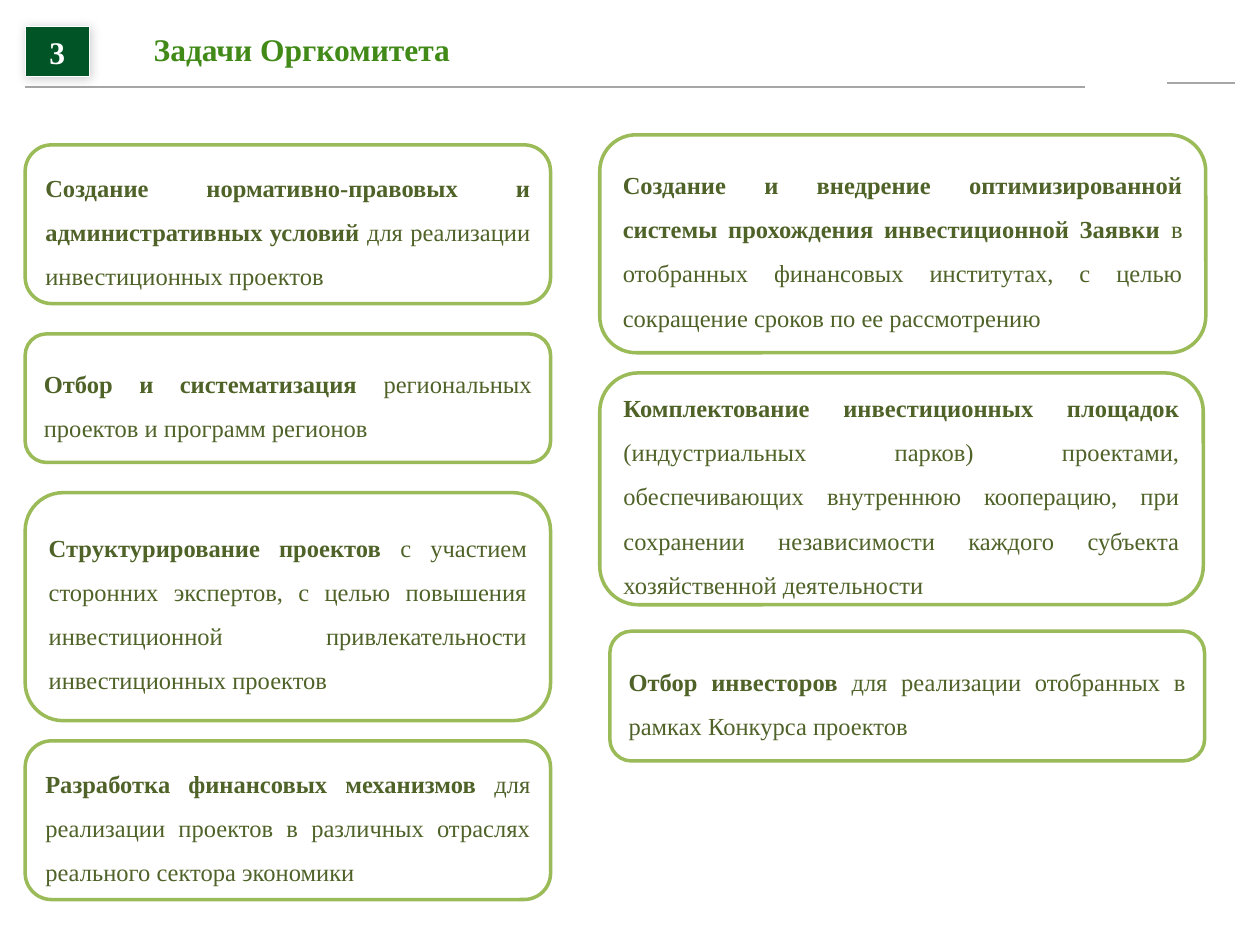
from lxml import etree
from pptx import Presentation
from pptx.dml.color import RGBColor
from pptx.enum.shapes import MSO_CONNECTOR, MSO_SHAPE
from pptx.enum.text import MSO_ANCHOR, PP_ALIGN
from pptx.oxml import parse_xml
from pptx.oxml.ns import nsdecls, qn
from pptx.util import Inches, Pt

RECT, ROUND = MSO_SHAPE.RECTANGLE, MSO_SHAPE.ROUNDED_RECTANGLE
STRAIGHT = MSO_CONNECTOR.STRAIGHT
MIDDLE = MSO_ANCHOR.MIDDLE
LEFT, CENTER, JUSTIFY = PP_ALIGN.LEFT, PP_ALIGN.CENTER, PP_ALIGN.JUSTIFY

WHITE = RGBColor(0xFF, 0xFF, 0xFF)
GRAY = RGBColor(0xA6, 0xA6, 0xA6)
GREEN = RGBColor(0x41, 0x8A, 0x18)
DARK = RGBColor(0x00, 0x54, 0x26)
LIME = RGBColor(0x9B, 0xBB, 0x59)
OLIVE = RGBColor(0x4F, 0x62, 0x28)

SHADOW = (
    f'<a:effectLst {nsdecls("a")}>'
    '<a:outerShdw blurRad="76200" dist="12700" dir="2700000">'
    '<a:srgbClr val="000000"><a:alpha val="20000"/></a:srgbClr>'
    '</a:outerShdw></a:effectLst>'
)

# left, top, width, height, bold lead, plain rest
TASKS = [
    (0.2, 1.15, 4.17, 1.26,
     "Создание нормативно-правовых и административных условий ",
     "для реализации инвестиционных проектов"),
    (0.2, 2.65, 4.17, 1.02, "Отбор и систематизация ",
     "региональных проектов и программ регионов"),
    (0.2, 3.91, 4.17, 1.81, "Структурирование проектов ",
     "с участием сторонних экспертов, с целью повышения "
     "инвестиционной привлекательности инвестиционных проектов"),
    (0.2, 5.88, 4.17, 1.26, "Разработка финансовых механизмов ",
     "для реализации проектов в различных отраслях "
     "реального сектора экономики"),
    (4.76, 1.07, 4.81, 1.73,
     "Создание и внедрение оптимизированной системы прохождения "
     "инвестиционной Заявки ",
     "в отобранных финансовых институтах, с целью сокращение сроков "
     "по ее рассмотрению"),
    (4.76, 2.96, 4.79, 1.84, "Комплектование инвестиционных площадок ",
     "(индустриальных парков) проектами, обеспечивающих внутреннюю "
     "кооперацию, при сохранении независимости каждого субъекта "
     "хозяйственной деятельности"),
    (4.84, 5.01, 4.72, 1.03, "Отбор инвесторов ",
     "для реализации отобранных в рамках Конкурса проектов"),
]


class Board:
    """Holds the text style and the current slide."""

    face = "Times New Roman"
    head = 18
    body = 14

    def __init__(self, slide):
        self.slide = slide

    def style(self, run, size, color, bold=True):
        font = run.font
        font.name, font.size, font.bold = self.face, Pt(size), bold
        font.color.rgb = color

    def title(self, text, *box):
        shape = self.slide.shapes.title
        shape.left, shape.top, shape.width, shape.height = map(Inches, box)
        frame = shape.text_frame
        frame.text = text
        frame.vertical_anchor = MIDDLE
        frame.margin_left = frame.margin_right = 0
        frame.margin_top = frame.margin_bottom = 0
        para = frame.paragraphs[0]
        para.alignment = LEFT
        self.style(para.runs[0], self.head, GREEN)

    def rule(self, left, right, top):
        line = self.slide.shapes.add_connector(
            STRAIGHT, Inches(left), Inches(top), Inches(right), Inches(top))
        line.line.color.rgb = GRAY
        line.line.width = Pt(1)
        etree.SubElement(line._element.spPr, qn("a:effectLst"))

    def shape(self, kind, box, fill, edge, width):
        shape = self.slide.shapes.add_shape(kind, *map(Inches, box))
        shape.fill.solid()
        shape.fill.fore_color.rgb = fill
        shape.line.color.rgb = edge
        shape.line.width = Pt(width)
        shape.text_frame.word_wrap = True
        shape.text_frame.vertical_anchor = MIDDLE
        return shape

    def task(self, *box, lead, rest):
        shape = self.shape(ROUND, box, WHITE, LIME, 2)
        shape.shadow.inherit = False
        para = shape.text_frame.paragraphs[0]
        para.alignment = JUSTIFY
        para.line_spacing = 1.5
        for text, bold in ((lead, True), (rest, False)):
            run = para.add_run()
            run.text = text
            self.style(run, self.body, OLIVE, bold)

    def badge(self, text, *box):
        shape = self.shape(RECT, box, DARK, WHITE, 0.75)
        shape._element.spPr.append(parse_xml(SHADOW))
        shape.text_frame.text = text
        para = shape.text_frame.paragraphs[0]
        para.alignment = CENTER
        self.style(para.runs[0], self.head, WHITE)


def main():
    deck = Presentation()
    deck.slide_width, deck.slide_height = Inches(10), Inches(7.5)
    board = Board(deck.slides.add_slide(deck.slide_layouts[5]))
    board.rule(0.2, 8.61, 0.69)
    board.rule(9.26, 9.8, 0.66)
    board.title("Задачи Оргкомитета", 1.22, 0.11, 7.27, 0.56)
    for *box, lead, rest in TASKS:
        board.task(*box, lead=lead, rest=rest)
    board.badge("3", 0.2, 0.21, 0.51, 0.4)
    deck.save("out.pptx")


if __name__ == "__main__":
    main()
